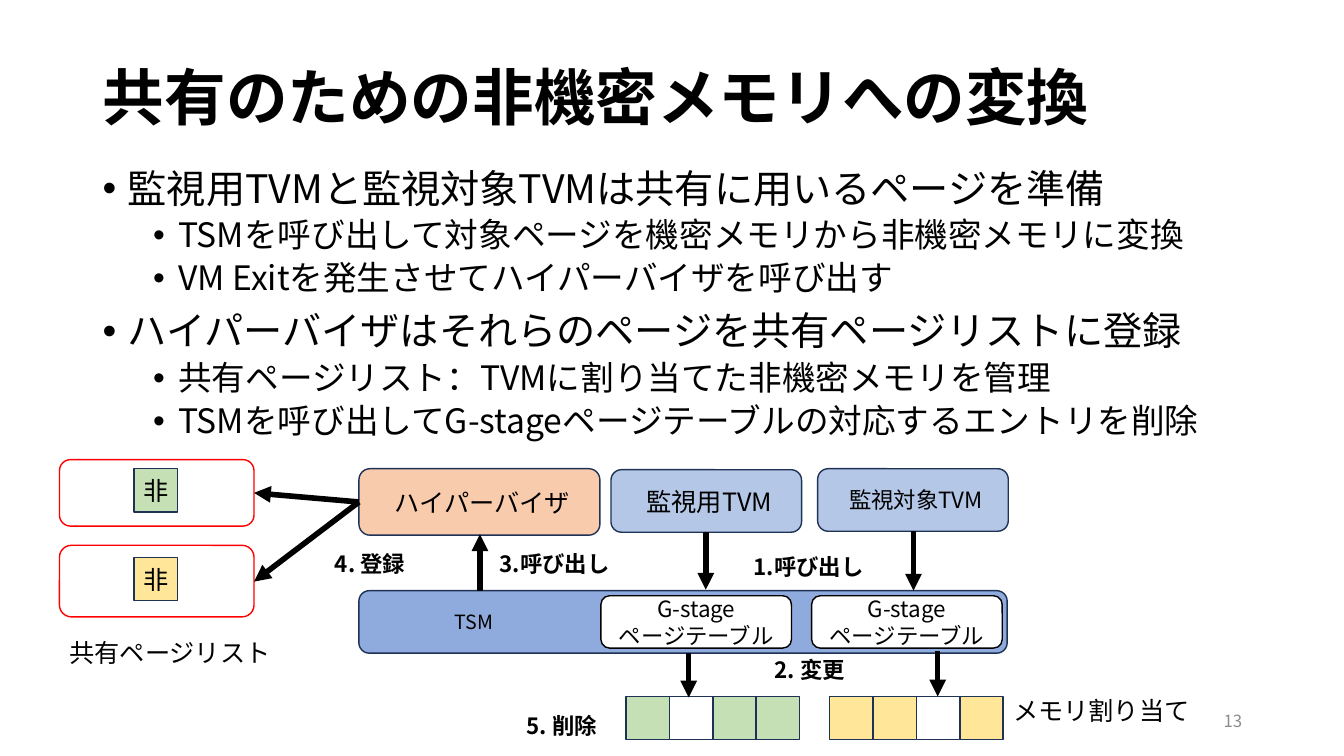
"""Builds the slide on converting pages to non-confidential memory."""
from dataclasses import dataclass

from pptx import Presentation
from pptx.dml.color import RGBColor
from pptx.enum.shapes import MSO_CONNECTOR as CONN, MSO_SHAPE as SHAPE
from pptx.enum.text import MSO_ANCHOR as ANCHOR, PP_ALIGN as ALIGN
from pptx.oxml.ns import qn
from pptx.util import Emu, Pt
from lxml.etree import SubElement

PX = 9144


@dataclass(frozen=True)
class Theme:
    font: str = "Noto Sans CJK JP"
    black: str = "000000"
    white: str = "FFFFFF"
    grey: str = "8C8C8C"
    red: str = "FF0000"
    navy: str = "1E3256"
    peach: str = "F8CBAD"
    light_blue: str = "B4C7E7"
    blue: str = "8FAADC"
    green: str = "C5E0B4"
    yellow: str = "FFE699"
    title: int = 44
    bullets: tuple = (28, 24)
    large: int = 18
    medium: int = 16
    small: int = 14
    number: int = 12


T = Theme()

BULLETS = [
    (0, "監視用TVMと監視対象TVMは共有に用いるページを準備"),
    (1, "TSMを呼び出して対象ページを機密メモリから非機密メモリに変換"),
    (1, "VM Exitを発生させてハイパーバイザを呼び出す"),
    (0, "ハイパーバイザはそれらのページを共有ページリストに登録"),
    (1, "共有ページリスト：TVMに割り当てた非機密メモリを管理"),
    (1, "TSMを呼び出してG-stageページテーブルの対応するエントリを削除"),
]
STEPS = [
    ("1.呼び出し", (722, 544, 160, 37)),
    ("2. 変更", (739, 646, 128, 37)),
    ("3.呼び出し", (476, 541, 148, 37)),
    ("4. 登録", (303, 541, 128, 37)),
    ("5. 削除", (493, 702, 128, 37)),
]
ARROWS = [
    (700, 528, 700, 585),
    (906, 527, 906, 586),
    (476, 586, 476, 530),
    (930, 646, 930, 691),
    (683, 648, 683, 692),
    (356, 498, 252, 489),
    (356, 498, 252, 577),
]


def px(*values):
    """Turn px lengths into EMU."""
    return [Emu(v * PX) for v in values]


def rgb(color):
    """Turn a hex string into a colour."""
    return RGBColor.from_string(color)


def style(p, size, color=T.black, bold=False, align=ALIGN.LEFT):
    """Format a paragraph and its runs."""
    p.alignment = align
    for r in p.runs:
        r.font.name = T.font
        r.font.size = Pt(size)
        r.font.bold = bold
        r.font.color.rgb = rgb(color)
        SubElement(r.font._element, qn("a:ea"), typeface=T.font)


def add_title(s, text):
    """Place the title in its placeholder."""
    sp = s.shapes.title
    sp.left, sp.top, sp.width, sp.height = px(92, 56, 1150, 88)
    tf = sp.text_frame
    tf.text = text
    tf.vertical_anchor = ANCHOR.MIDDLE
    tf.paragraphs[0].line_spacing = 0.9
    style(tf.paragraphs[0], T.title, bold=True)


def add_bullets(s, items, box):
    """Add a two-level bulleted list."""
    tf = s.shapes.add_textbox(*px(*box)).text_frame
    tf.word_wrap = True
    tf.text = "\n".join(text for _, text in items)
    for p, (level, _) in zip(tf.paragraphs, items):
        p.level = level
        p.line_spacing = 0.9
        p.space_before = Pt(5 if level else 10)
        style(p, T.bullets[level])
        pr = p._p.get_or_add_pPr()
        pr.set("marL", str((25 + 50 * level) * PX))
        pr.set("indent", str(-25 * PX))
        SubElement(pr, qn("a:buFont"), typeface="Arial")
        SubElement(pr, qn("a:buChar"), char="•")


def add_label(s, text, box, size, color=T.black, bold=False,
              align=ALIGN.LEFT, wrap=True, anchor=ANCHOR.TOP):
    """Add a line of free text."""
    tf = s.shapes.add_textbox(*px(*box)).text_frame
    tf.word_wrap = wrap
    tf.vertical_anchor = anchor
    tf.text = text
    style(tf.paragraphs[0], size, color, bold, align)


def add_box(s, box, fill, line=T.navy, text="", size=T.large,
            shape=SHAPE.ROUNDED_RECTANGLE, align=ALIGN.CENTER, inset=0):
    """Add a filled, outlined box with optional text."""
    sp = s.shapes.add_shape(shape, *px(*box))
    sp.shadow.inherit = False
    sp.fill.solid()
    sp.fill.fore_color.rgb = rgb(fill)
    sp.line.color.rgb = rgb(line)
    sp.line.width = Pt(1)
    if text:
        tf = sp.text_frame
        tf.margin_left, tf.margin_right, tf.margin_top, tf.margin_bottom = px(inset, 0, 0, 0)
        tf.vertical_anchor = ANCHOR.MIDDLE
        tf.text = text
        for p in tf.paragraphs:
            style(p, size, align=align)


def add_page(s, x, y, fill, text=""):
    """Add one square memory page."""
    add_box(s, (x, y, 43, 43), fill, text=text, shape=SHAPE.RECTANGLE)


def add_memory(s, x, fill, removed):
    """Add a row of four pages, one of them blank."""
    for i in range(4):
        add_page(s, x + 43 * i, 691, T.white if i == removed else fill)


def add_arrow(s, ends):
    """Add a thick arrow pointing at its second end."""
    c = s.shapes.add_connector(CONN.STRAIGHT, *px(*ends))
    c.line.color.rgb = rgb(T.black)
    c.line.width = Pt(4)
    SubElement(c.line._get_or_add_ln(), qn("a:tailEnd"), type="triangle")
    SubElement(c._element.spPr, qn("a:effectLst"))


def main():
    """Build and save the slide."""
    prs = Presentation()
    prs.slide_width, prs.slide_height = px(1333, 750)
    s = prs.slides.add_slide(prs.slide_layouts[5])
    add_title(s, "共有のための非機密メモリへの変換")
    add_bullets(s, BULLETS, (92, 163, 1150, 290))

    add_box(s, (356, 465, 239, 66), T.peach, text="ハイパーバイザ", inset=6)
    add_box(s, (606, 466, 189, 62), T.light_blue, text="監視用TVM", inset=6)
    add_box(s, (811, 465, 189, 62), T.light_blue, text="監視対象TVM", size=T.medium, inset=6)
    add_box(s, (356, 586, 643, 62), T.blue, text="TSM", size=T.small,
            align=ALIGN.LEFT, inset=92)
    for x in (596, 805):
        add_box(s, (x, 591, 189, 52), T.white, T.black, "G-stage\nページテーブル", T.medium)

    for y, height, page_y, fill in ((456, 66, 465, T.green), (541, 71, 553, T.yellow)):
        add_box(s, (59, y, 193, height), T.white, T.red)
        add_page(s, 133, page_y, fill, "非")
    add_memory(s, 621, T.green, removed=1)
    add_memory(s, 823, T.yellow, removed=2)

    for ends in ARROWS:
        add_arrow(s, ends)
    for text, box in STEPS:
        add_label(s, text, box, T.medium, bold=True, align=ALIGN.CENTER)
    add_label(s, "共有ページリスト", (59, 627, 222, 40), T.large, wrap=False)
    add_label(s, "メモリ割り当て", (995, 685, 197, 40), T.large, wrap=False)
    add_label(s, "13", (942, 695, 300, 40), T.number, T.grey,
              align=ALIGN.RIGHT, anchor=ANCHOR.MIDDLE)
    prs.save("out.pptx")


if __name__ == "__main__":
    main()
